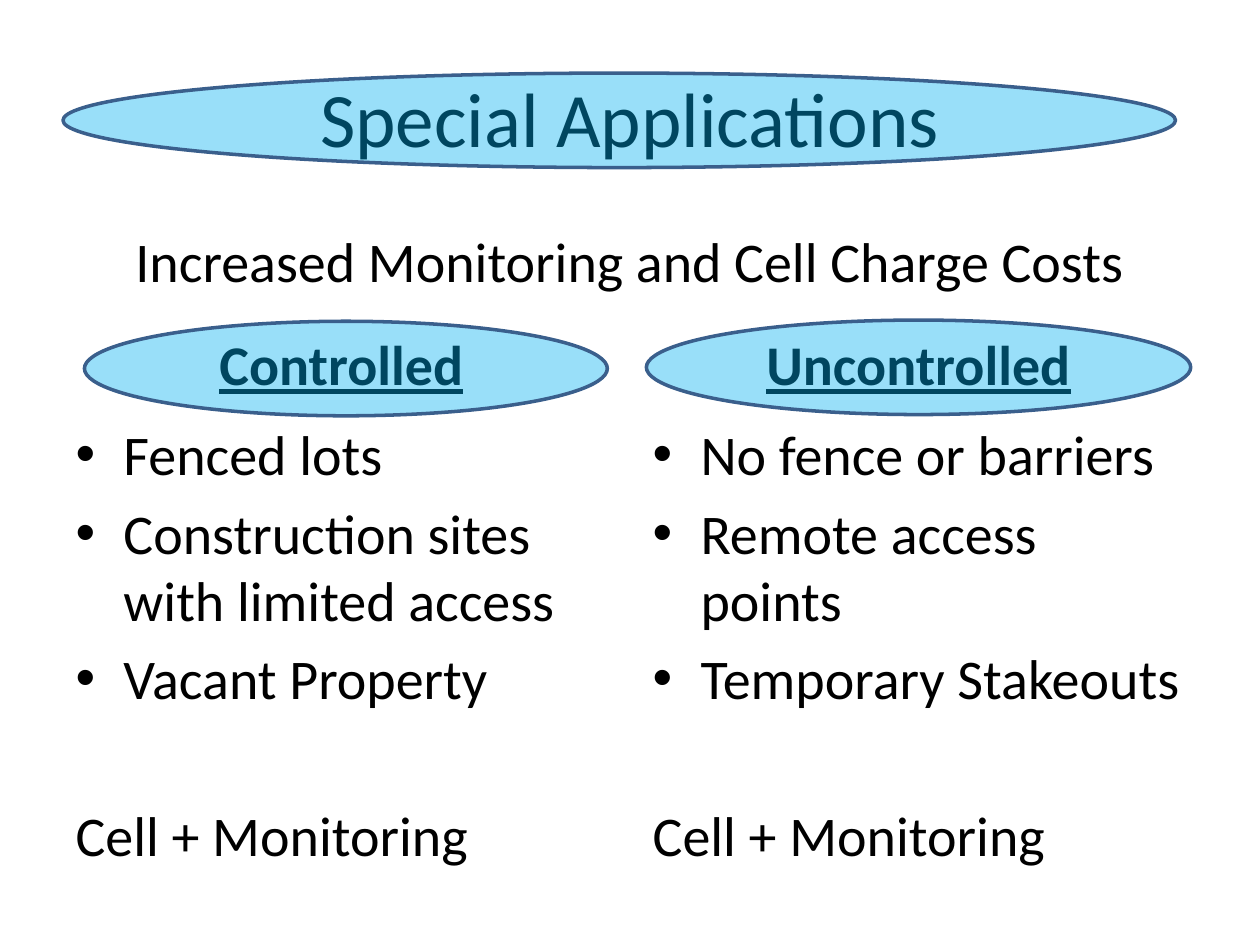
from dataclasses import dataclass

from lxml import etree
from pptx import Presentation
from pptx.dml.color import RGBColor
from pptx.enum import shapes, text
from pptx.oxml import ns
from pptx.util import Inches, Pt


@dataclass(frozen=True)
class Theme:
    font: str = "Calibri"
    ink: RGBColor = RGBColor(0x00, 0x00, 0x00)
    highlight: RGBColor = RGBColor(0x00, 0xB0, 0xF0)
    outline: RGBColor = RGBColor(0x3A, 0x5F, 0x8C)
    highlight_alpha: int = 40
    outline_width: float = 2
    title_size: int = 44
    body_size: int = 32
    item_gap: float = 6.4
    closing_gap: float = 51


def set_bullet(paragraph, char=None, hang=0.0):
    """Set a hanging indent, with the given bullet or with none."""
    properties = paragraph._p.get_or_add_pPr()
    properties.set("marL", str(Inches(hang)))
    properties.set("indent", str(-Inches(hang)))
    if char:
        font = etree.SubElement(properties, ns.qn("a:buFont"))
        font.set("typeface", "Arial")
        etree.SubElement(properties, ns.qn("a:buChar")).set("char", char)
    else:
        etree.SubElement(properties, ns.qn("a:buNone"))


class SlideBuilder:
    def __init__(self, slide, theme):
        self.slide = slide
        self.theme = theme

    def add_text(self, paragraph, wording, size=None,
                 align=text.PP_ALIGN.LEFT, bold=False, underline=False,
                 before=0, bullet=None, hang=0.0):
        set_bullet(paragraph, bullet, hang)
        paragraph.alignment = align
        paragraph.space_before = Pt(before)
        run = paragraph.add_run()
        run.text = wording
        font = run.font
        font.name = self.theme.font
        font.size = Pt(size or self.theme.body_size)
        font.bold = bold
        font.underline = underline
        font.color.rgb = self.theme.ink

    def frame(self, index, box, anchor):
        """Move a placeholder to box and return its text frame."""
        holder = self.slide.placeholders[index]
        holder.left, holder.top, holder.width, holder.height = map(Inches, box)
        frame = holder.text_frame
        frame.word_wrap = True
        frame.auto_size = text.MSO_AUTO_SIZE.NONE
        frame.vertical_anchor = anchor
        return frame

    def title(self, wording, box):
        frame = self.frame(0, box, text.MSO_ANCHOR.MIDDLE)
        self.add_text(frame.paragraphs[0], wording,
                      size=self.theme.title_size, align=text.PP_ALIGN.CENTER)

    def heading(self, index, wording, box):
        frame = self.frame(index, box, text.MSO_ANCHOR.BOTTOM)
        self.add_text(frame.paragraphs[0], wording,
                      align=text.PP_ALIGN.CENTER, bold=True, underline=True)

    def bullets(self, index, items, closing, box):
        """Fill a list that ends in a set-apart line without a bullet."""
        frame = self.frame(index, box, text.MSO_ANCHOR.TOP)
        for number, item in enumerate(items):
            paragraph = frame.add_paragraph() if number else frame.paragraphs[0]
            self.add_text(paragraph, item, bullet="•", hang=0.38,
                          before=self.theme.item_gap if number else 0)
        self.add_text(frame.add_paragraph(), closing, hang=0.38,
                      before=self.theme.closing_gap)

    def statement(self, wording, box):
        frame = self.slide.shapes.add_textbox(*map(Inches, box)).text_frame
        frame.word_wrap = True
        self.add_text(frame.paragraphs[0], wording,
                      align=text.PP_ALIGN.CENTER)

    def highlight(self, box):
        """Lay a see-through ellipse over the text below it."""
        ellipse = self.slide.shapes.add_shape(
            shapes.MSO_SHAPE.OVAL, *map(Inches, box))
        ellipse.shadow.inherit = False
        ellipse.fill.solid()
        ellipse.fill.fore_color.rgb = self.theme.highlight
        color = ellipse._element.spPr.find(
            f"{ns.qn('a:solidFill')}/{ns.qn('a:srgbClr')}")
        alpha = etree.SubElement(color, ns.qn("a:alpha"))
        alpha.set("val", str(self.theme.highlight_alpha * 1000))
        ellipse.line.color.rgb = self.theme.outline
        ellipse.line.width = Pt(self.theme.outline_width)


def main():
    deck = Presentation()
    deck.slide_width, deck.slide_height = Inches(10), Inches(7.5)
    comparison = deck.slide_layouts[4]
    builder = SlideBuilder(deck.slides.add_slide(comparison), Theme())

    margin, column_width = 0.5, 4.42
    columns = [
        ("Controlled",
         ["Fenced lots", "Construction sites with limited access",
          "Vacant Property"],
         (0.67, 2.55, 4.15, 0.75), 3.8),
        ("Uncontrolled",
         ["No fence or barriers", "Remote access points",
          "Temporary Stakeouts"],
         (5.13, 2.54, 4.32, 0.75), 3.88),
    ]

    builder.title("Special Applications", (margin, 0.3, 9, 1.25))
    builder.highlight((margin, 0.58, 8.83, 0.75))
    builder.statement("Increased Monitoring and Cell Charge Costs",
                      (margin, 1.75, 9, 0.67))
    for number, (heading, items, ellipse, list_height) in enumerate(columns):
        left = margin + number * (9 - column_width)
        index = 1 + 2 * number
        builder.heading(index, heading, (left, 2.5, column_width, 0.7))
        builder.bullets(index + 1, items, "Cell + Monitoring",
                        (left, 3.28, column_width, list_height))
        builder.highlight(ellipse)

    deck.save("out.pptx")


if __name__ == "__main__":
    main()
